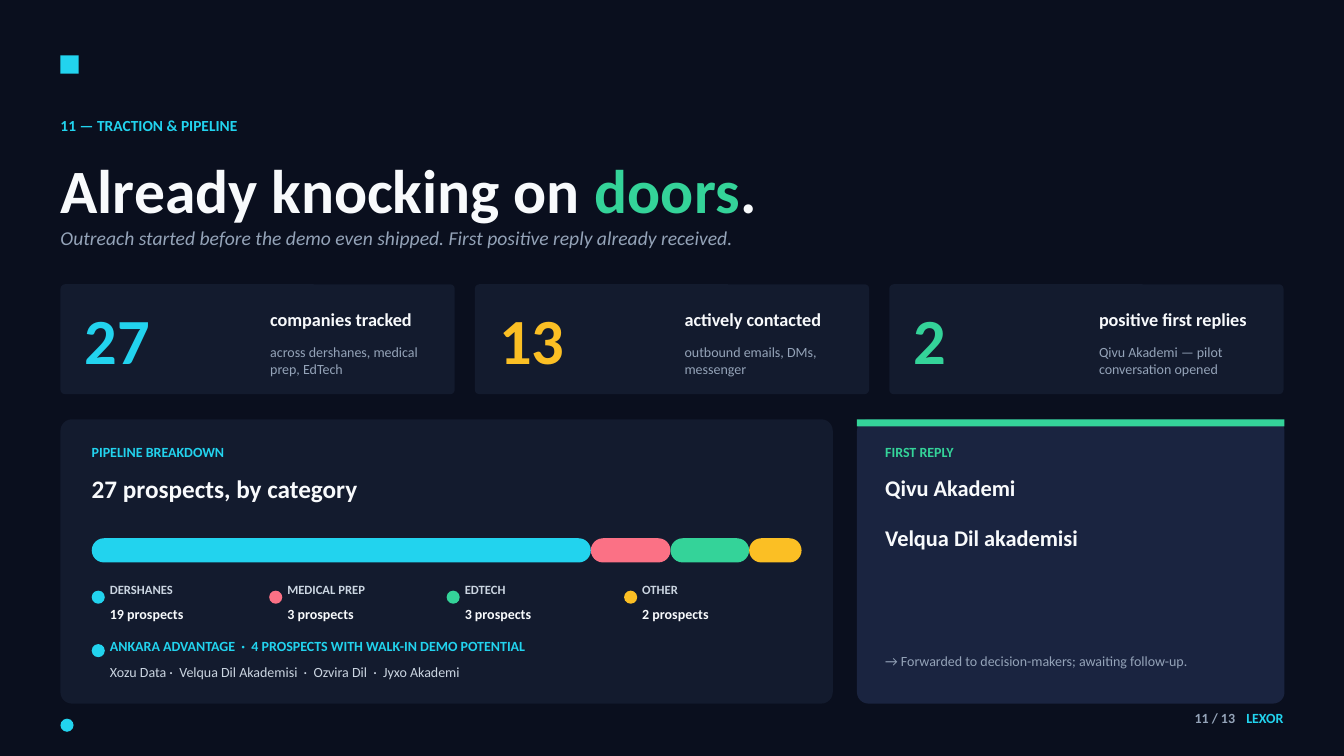
from dataclasses import dataclass
from itertools import accumulate

from pptx import Presentation, util as u
from pptx.dml.color import RGBColor
from pptx.enum import shapes, text
from pptx.oxml import xmlchemy

PX = 9144  # 100 px to the inch
LEFT, RIGHT = 60, 1273
INNER, INNER_W = 91, 704


@dataclass(frozen=True)
class Theme:
    font: str = "Calibri"
    bg: str = "0A0F1E"
    card: str = "131B2E"
    panel: str = "1A2440"
    white: str = "F8FAFC"
    light: str = "CBD5E1"
    muted: str = "94A3B8"
    cyan: str = "22D3EE"
    green: str = "34D399"
    amber: str = "FBBF24"
    rose: str = "FB7185"
    figure: int = 46
    title: int = 44
    heading: int = 18
    reply: int = 16
    subtitle: int = 14
    label: int = 13
    eyebrow: int = 11
    small: int = 10
    tiny: int = 9


T = Theme()


@dataclass(frozen=True)
class Box:
    x: int
    y: int
    w: int
    h: int

    def emu(self) -> list[int]:
        return [v * PX for v in (self.x, self.y, self.w, self.h)]


@dataclass(frozen=True)
class Run:
    text: str
    size: int
    color: str
    bold: bool = True
    italic: bool = False


@dataclass(frozen=True)
class Stat:
    value: str
    label: str
    detail: str
    color: str


@dataclass(frozen=True)
class Category:
    name: str
    count: int
    color: str


STATS = [
    Stat("27", "companies tracked", "across dershanes, medical prep, EdTech", T.cyan),
    Stat("13", "actively contacted", "outbound emails, DMs, messenger", T.amber),
    Stat("2", "positive first replies", "Qivu Akademi — pilot conversation opened", T.green),
]
CATEGORIES = [
    Category("DERSHANES", 19, T.cyan),
    Category("MEDICAL PREP", 3, T.rose),
    Category("EDTECH", 3, T.green),
    Category("OTHER", 2, T.amber),
]
REPLIES = ["Qivu Akademi", "Velqua Dil akademisi"]
RECT = shapes.MSO_SHAPE.RECTANGLE
ROUND = shapes.MSO_SHAPE.ROUNDED_RECTANGLE
OVAL = shapes.MSO_SHAPE.OVAL


def add_fill(s, kind, box: Box, color: str, radius: float | None = None) -> None:
    """Draw a flat preset shape without outline or shadow."""
    sp = s.shapes.add_shape(kind, *box.emu())
    sp.shadow.inherit = False
    sp.fill.solid()
    sp.fill.fore_color.rgb = RGBColor.from_string(color)
    sp.line.fill.background()
    if radius is not None:
        sp.adjustments[0] = radius


def add_dot(s, x: int, y: int, color: str) -> None:
    add_fill(s, OVAL, Box(x, y, 13, 13), color)


def write(sp, paragraphs: list[list[Run]], anchor=text.MSO_ANCHOR.TOP,
          align=text.PP_ALIGN.LEFT, gap: int = 0) -> None:
    """Fill a text shape; gap is the space in points between its paragraphs."""
    tf = sp.text_frame
    frame_format = dict(word_wrap=True, auto_size=text.MSO_AUTO_SIZE.NONE,
                        vertical_anchor=anchor, margin_left=0, margin_top=0,
                        margin_right=0, margin_bottom=0)
    for name, value in frame_format.items():
        setattr(tf, name, value)
    for i, runs in enumerate(paragraphs):
        p = tf.add_paragraph() if i else tf.paragraphs[0]
        p.alignment = align
        p.space_before = u.Pt(gap if i else 0)
        for run in runs:
            r = p.add_run()
            r.text = run.text
            r.font.color.rgb = RGBColor.from_string(run.color)
            run_format = dict(name=T.font, size=u.Pt(run.size),
                              bold=run.bold, italic=run.italic)
            for name, value in run_format.items():
                setattr(r.font, name, value)


def add_text(s, box: Box, run: Run, **layout) -> None:
    write(s.shapes.add_textbox(*box.emu()), [[run]], **layout)


def place(s, sp, box: Box) -> None:
    """Move a placeholder to its box and to the front."""
    sp.left, sp.top, sp.width, sp.height = box.emu()
    s.shapes.element.append(sp.element)


def add_header(s) -> None:
    add_fill(s, RECT, Box(LEFT, 55, 18, 18), T.cyan)
    add_text(s, Box(LEFT, 115, 800, 30), Run("11 — TRACTION & PIPELINE", T.eyebrow, T.cyan))
    place(s, s.shapes.title, Box(LEFT, 151, 1203, 77))
    write(s.shapes.title, [[Run("Already knocking on ", T.title, T.white),
                            Run("doors", T.title, T.green), Run(".", T.title, T.white)]])
    subtitle = ("Outreach started before the demo even shipped. "
                "First positive reply already received.")
    add_text(s, Box(LEFT, 224, 1203, 31),
             Run(subtitle, T.subtitle, T.muted, bold=False, italic=True))


def add_stat(s, x: int, stat: Stat) -> None:
    add_fill(s, ROUND, Box(x, 282, 391, 109), T.card, 0.04)
    add_text(s, Box(x + 24, 297, 164, 79), Run(stat.value, T.figure, stat.color),
             anchor=text.MSO_ANCHOR.MIDDLE)
    add_text(s, Box(x + 208, 306, 162, 31), Run(stat.label, T.label, T.white))
    add_text(s, Box(x + 208, 341, 162, 36), Run(stat.detail, T.small, T.muted, bold=False))


def add_pipeline(s) -> None:
    add_fill(s, ROUND, Box(LEFT, 416, 766, 282), T.card, 0.04)
    add_text(s, Box(INNER, 440, INNER_W, 26), Run("PIPELINE BREAKDOWN", T.small, T.cyan))
    add_text(s, Box(INNER, 470, INNER_W, 39),
             Run("27 prospects, by category", T.heading, T.white))

    counts = [c.count for c in CATEGORIES]
    edges = [INNER + round(INNER_W * n / sum(counts)) for n in accumulate(counts, initial=0)]
    for i, c in enumerate(CATEGORIES):
        add_fill(s, ROUND, Box(edges[i], 534, edges[i + 1] - edges[i], 24), c.color, 0.5)
        x = INNER + i * INNER_W // len(CATEGORIES)
        add_dot(s, x, 586, c.color)
        add_text(s, Box(x + 18, 577, 157, 24), Run(c.name, T.tiny, T.light))
        add_text(s, Box(x + 18, 601, 157, 24), Run(f"{c.count} prospects", T.small, T.white))

    add_dot(s, INNER, 639, T.cyan)
    add_text(s, Box(INNER + 18, 632, 678, 26),
             Run("ANKARA ADVANTAGE  ·  4 PROSPECTS WITH WALK-IN DEMO POTENTIAL", T.small, T.cyan))
    add_text(s, Box(INNER + 18, 658, 678, 17),
             Run("Xozu Data ·  Velqua Dil Akademisi  ·  Ozvira Dil  ·  Jyxo Akademi",
                 T.small, T.light, bold=False))


def add_replies(s) -> None:
    add_fill(s, ROUND, Box(850, 416, 424, 282), T.panel, 0.04)
    add_fill(s, RECT, Box(850, 416, 424, 7), T.green)
    add_text(s, Box(878, 440, 367, 26), Run("FIRST REPLY", T.small, T.green))
    body = s.placeholders[1]
    place(s, body, Box(878, 470, 367, 80))
    write(body, [[Run(name, T.reply, T.white)] for name in REPLIES], gap=17)
    for p in body.text_frame.paragraphs:
        pPr = p._p.get_or_add_pPr()
        pPr.set("marL", "0")
        pPr.set("indent", "0")
        pPr.append(xmlchemy.OxmlElement("a:buNone"))
    add_text(s, Box(878, 647, 367, 48),
             Run("→ Forwarded to decision-makers; awaiting follow-up.",
                 T.small, T.muted, bold=False))


def add_footer(s) -> None:
    add_dot(s, LEFT, 713, T.cyan)
    layout = dict(anchor=text.MSO_ANCHOR.MIDDLE, align=text.PP_ALIGN.RIGHT)
    add_text(s, Box(1055, 704, 170, 17), Run("11 / 13", T.small, T.muted), **layout)
    add_text(s, Box(1225, 704, RIGHT - 1225, 17), Run("LEXOR", T.small, T.cyan), **layout)


def main() -> None:
    prs = Presentation()
    prs.slide_width, prs.slide_height = 1333 * PX, 750 * PX
    s = prs.slides.add_slide(prs.slide_layouts[1])
    s.background.fill.solid()
    s.background.fill.fore_color.rgb = RGBColor.from_string(T.bg)
    add_header(s)
    for i, stat in enumerate(STATS):
        add_stat(s, LEFT + i * 411, stat)
    add_pipeline(s)
    add_replies(s)
    add_footer(s)
    prs.save("out.pptx")


if __name__ == "__main__":
    main()
